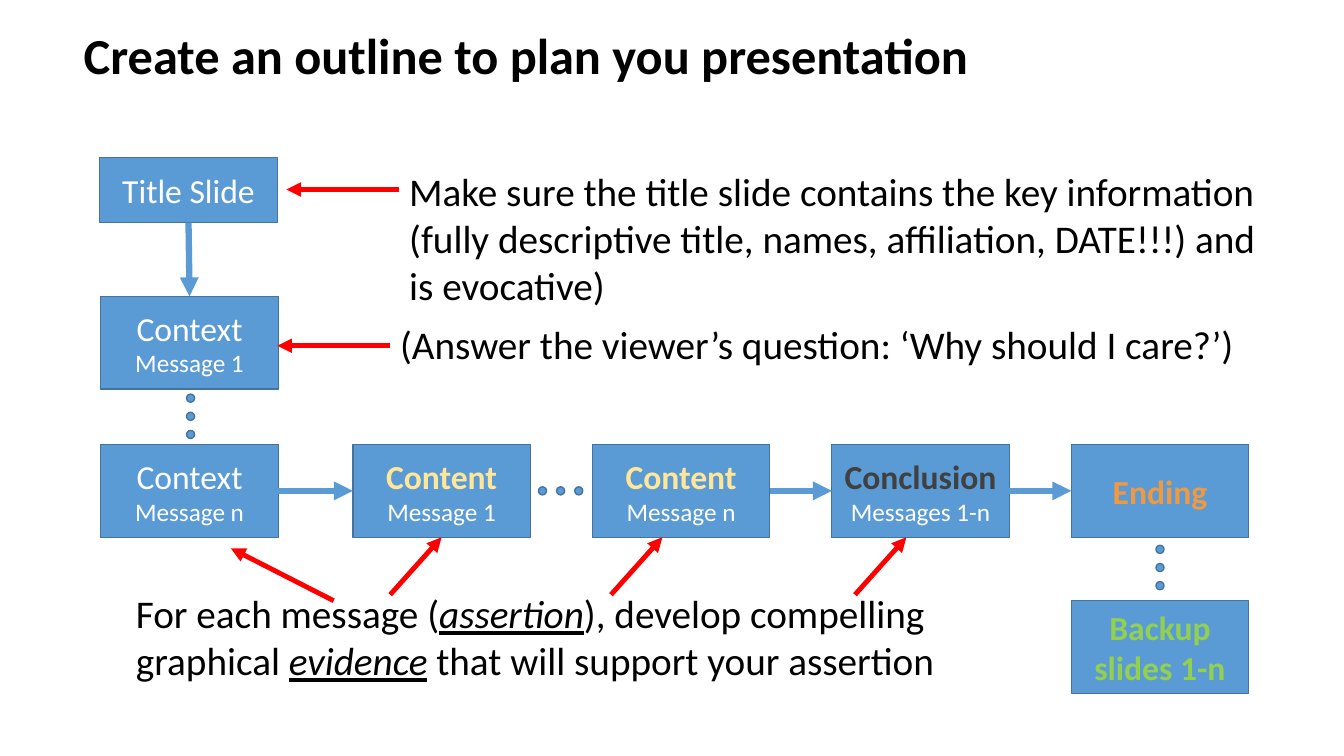
from lxml.etree import SubElement
from pptx import Presentation
from pptx.dml.color import RGBColor
from pptx.enum.shapes import MSO_CONNECTOR, MSO_SHAPE
from pptx.enum.text import MSO_ANCHOR, MSO_AUTO_SIZE, PP_ALIGN
from pptx.oxml.ns import qn
from pptx.util import Inches, Pt

COLORS = {
    "text": "000000", "white": "FFFFFF", "box": "5B9BD5", "edge": "43739E",
    "pointer": "FF0000", "content": "FFE699", "conclusion": "404040",
    "ending": "F19941", "backup": "92D050",
}
FONT = "Calibri"
BOX_WIDTH, BOX_HEIGHT = 1.76, 0.92
DOT_SIZE, DOT_PITCH = 0.08, 0.18
TOP, LEFT, BOTTOM, RIGHT = range(4)


def color(name):
    return RGBColor.from_string(COLORS[name])


def add_run(paragraph, text, size, color_name="text", bold=False, emphasis=False):
    run = paragraph.add_run()
    run.text = text
    font = run.font
    font.name, font.size, font.bold = FONT, Pt(size), bold
    font.italic = font.underline = emphasis
    font.color.rgb = color(color_name)


def add_title(slide, left, top, width, height):
    title = slide.shapes.title
    title.left, title.top = Inches(left), Inches(top)
    title.width, title.height = Inches(width), Inches(height)
    frame = title.text_frame
    frame.auto_size = MSO_AUTO_SIZE.NONE
    frame.vertical_anchor = MSO_ANCHOR.TOP
    paragraph = frame.paragraphs[0]
    paragraph.alignment = PP_ALIGN.LEFT
    paragraph.line_spacing = 0.9
    add_run(paragraph, "Create an outline to plan you presentation", 36, bold=True)


def add_filled_shape(slide, kind, left, top, width, height):
    shape = slide.shapes.add_shape(
        kind, Inches(left), Inches(top), Inches(width), Inches(height))
    shape.shadow.inherit = False
    shape.fill.solid()
    shape.fill.fore_color.rgb = color("box")
    shape.line.color.rgb = color("edge")
    shape.line.width = Pt(1)
    return shape


def add_step(slide, left, top, heading, message="", heading_color="white",
             height=BOX_HEIGHT):
    shape = add_filled_shape(
        slide, MSO_SHAPE.FLOWCHART_PROCESS, left, top, BOX_WIDTH, height)
    frame = shape.text_frame
    frame.word_wrap = True
    frame.vertical_anchor = MSO_ANCHOR.MIDDLE
    paragraph = frame.paragraphs[0]
    paragraph.alignment = PP_ALIGN.CENTER
    add_run(paragraph, heading, 24, heading_color, bold=heading_color != "white")
    if message:
        add_run(paragraph, message, 18, "white")
    return shape


def add_dots(slide, left, top, across=False):
    for index in range(3):
        offset = index * DOT_PITCH
        add_filled_shape(
            slide, MSO_SHAPE.OVAL, left + offset * across,
            top + offset * (not across), DOT_SIZE, DOT_SIZE)


def add_arrow(slide, start, end, color_name, width):
    connector = slide.shapes.add_connector(
        MSO_CONNECTOR.STRAIGHT, *[Inches(value) for value in (*start, *end)])
    connector.line.color.rgb = color(color_name)
    connector.line.width = Pt(width)
    SubElement(connector.line._get_or_add_ln(), qn("a:tailEnd"), type="triangle")
    SubElement(connector._element.spPr, qn("a:effectLst"))
    return connector


def add_pointer(slide, start, end):
    return add_arrow(slide, start, end, "pointer", 3.5)


def add_link(slide, source, source_side, target, target_side):
    connector = add_arrow(slide, (0, 0), (0, 0), "box", 4.5)
    connector.begin_connect(source, source_side)
    connector.end_connect(target, target_side)


def add_note(slide, left, top, width, height, runs):
    box = slide.shapes.add_textbox(
        Inches(left), Inches(top), Inches(width), Inches(height))
    frame = box.text_frame
    frame.word_wrap = True
    frame.auto_size = MSO_AUTO_SIZE.SHAPE_TO_FIT_TEXT
    for text, emphasis in runs:
        add_run(frame.paragraphs[0], text, 28, emphasis=emphasis)


def add_opening(slide, left, top):
    title_step = add_step(slide, left - 0.01, top, "Title Slide", height=0.65)
    context = add_step(slide, left, top + 1.38, "Context ", "Message 1")
    add_link(slide, title_step, BOTTOM, context, TOP)
    add_dots(slide, left + 0.85, top + 2.35)
    note_left = left + 2.87
    notes = [
        (note_left + 0.09, top + 0.05, 1.51, 0.32,
         "Make sure the title slide contains the key information (fully "
         "descriptive title, names, affiliation, DATE!!!) and is evocative)"),
        (note_left, top + 1.57, 0.57, 1.87,
         "(Answer the viewer’s question: ‘Why should I care?’)"),
    ]
    for note_x, note_y, height, arrow_offset, text in notes:
        add_note(slide, note_x, note_y, 8.9, height, [(text, False)])
        arrow_y = top + arrow_offset
        add_pointer(slide, (note_x, arrow_y), (note_x - 1.12, arrow_y))


def add_sequence(slide, left, top):
    context = add_step(slide, left, top, "Context ", "Message n")
    steps = [
        ("Content ", "Message 1", "content"),
        ("Content ", "Message n", "content"),
        ("Conclusion ", "Messages 1-n", "conclusion"),
        ("Ending", "", "ending"),
    ]
    lefts = [left + 2.5 + index * 2.375 for index in range(len(steps))]
    first, last, conclusion, ending = [
        add_step(slide, x, top, *step) for x, step in zip(lefts, steps)]
    for source, target in ((context, first), (last, conclusion), (conclusion, ending)):
        add_link(slide, source, RIGHT, target, LEFT)
    add_dots(slide, lefts[0] + 1.84, top + 0.42, across=True)
    add_dots(slide, lefts[-1] + 0.84, top + 1)
    add_step(slide, lefts[-1], top + 1.55, "Backup slides 1-n", heading_color="backup")
    return first


def add_evidence(slide, left, top, first_content):
    add_note(slide, left, top, 8.46, 1.04, [
        ("For each message (", False), ("assertion", True),
        ("), develop compelling graphical ", False), ("evidence", True),
        (" that will support your assertion", False),
    ])
    add_pointer(slide, (left + 2.06, top + 0.16), (left + 1.04, top - 0.36))
    pointers = [
        add_pointer(slide, (left + x, top + 0.1), (left + x + 0.51, top - 0.47))
        for x in (2.62, 4.81, 7.23)]
    pointers[0].end_connect(first_content, BOTTOM)


def main():
    presentation = Presentation()
    presentation.slide_width = Inches(13.33)
    presentation.slide_height = Inches(7.5)
    slide = presentation.slides.add_slide(presentation.slide_layouts[5])
    add_title(slide, 0.73, 0.26, 11.79, 1.45)
    add_opening(slide, 1, 1.56)
    first_content = add_sequence(slide, 1, 4.41)
    add_evidence(slide, 1.25, 5.8, first_content)
    presentation.save("out.pptx")


if __name__ == "__main__":
    main()
